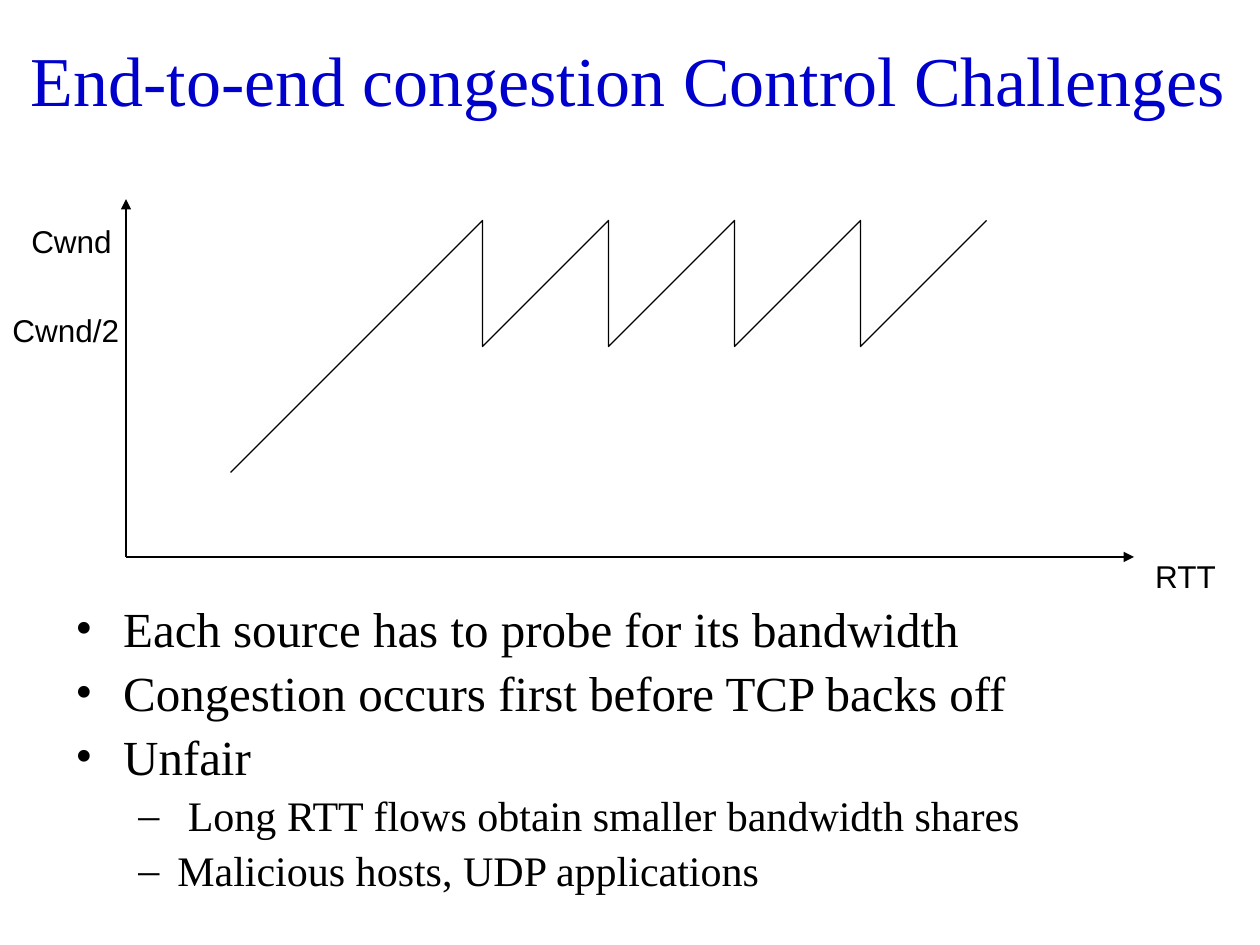
import pptx
import pptx.util
import pptx.dml.color
import pptx.enum.shapes
import pptx.enum.text
import pptx.oxml.ns
from lxml import etree

Inches, Pt = pptx.util.Inches, pptx.util.Pt
qn = pptx.oxml.ns.qn
COLORS = {"title": "0000CC", "ink": "000000"}
SERIF, SANS = "Times New Roman", "Arial"
WIDTH, HEIGHT = 10, 7.5

TITLE = " End-to-end congestion Control Challenges"
POINTS = [
    (0, "Each source has to probe for its bandwidth"),
    (0, "Congestion occurs first before TCP backs off"),
    (0, "Unfair"),
    (1, " Long RTT flows obtain smaller bandwidth shares"),
    (1, "Malicious hosts, UDP applications"),
]
# level: (size, left margin, hanging indent, bullet)
LEVELS = [(28, 0.38, 0.38, "•"), (24, 0.81, 0.31, "–")]
AXIS_LABELS = [
    ("RTT", (9.07, 4.37, 0.69, 0.4)),
    ("Cwnd", (0.15, 1.71, 0.84, 0.4)),
    ("Cwnd/2", (0, 2.42, 1.05, 0.4)),
]
ORIGIN = (1, 4.42)
AXIS_ENDS = [(9, 4.42), (1, 1.58)]
START, FIRST_PEAK = (1.83, 3.75), (3.83, 1.75)
DROP, DROPS = 1, 4

deck = pptx.Presentation()
deck.slide_width, deck.slide_height = Inches(WIDTH), Inches(HEIGHT)
page = deck.slides.add_slide(deck.slide_layouts[6])


def color(name):
    return pptx.dml.color.RGBColor.from_string(COLORS[name])


def write(para, text, size=18, font=SANS, ink="ink"):
    span = para.add_run()
    span.text = text
    span.font.size, span.font.name = Pt(size), font
    span.font.color.rgb = color(ink)


def add_box(area, wrap=True):
    frame = page.shapes.add_textbox(*map(Inches, area)).text_frame
    frame.word_wrap = wrap
    return frame


def add_bullet(para, margin, hang, mark):
    props = para._p.get_or_add_pPr()
    props.set("marL", str(Inches(margin)))
    props.set("indent", str(-Inches(hang)))
    etree.SubElement(props, qn("a:buFont"), typeface=SERIF)
    etree.SubElement(props, qn("a:buChar"), char=mark)


def add_axis(end):
    axis = page.shapes.add_connector(
        pptx.enum.shapes.MSO_CONNECTOR.STRAIGHT, *map(Inches, ORIGIN + end))
    axis.line.color.rgb, axis.line.width = color("ink"), Pt(0.75)
    etree.SubElement(axis.line._get_or_add_ln(), qn("a:tailEnd"), type="triangle")
    etree.SubElement(axis._element.spPr, qn("a:effectLst"))


def add_sawtooth():
    """Climb to the first peak, then repeatedly halve and climb again."""
    x, peak = FIRST_PEAK
    corners = [FIRST_PEAK]
    for tooth in range(DROPS):
        corners += [(x + tooth * DROP, peak + DROP), (x + (tooth + 1) * DROP, peak)]
    builder = page.shapes.build_freeform(*map(Inches, START))
    builder.add_line_segments(
        [(Inches(left), Inches(top)) for left, top in corners], close=False)
    curve = builder.convert_to_shape()
    curve.fill.background()
    curve.line.color.rgb, curve.line.width = color("ink"), Pt(0.75)
    curve.shadow.inherit = False


heading = add_box((0, 0, 9.83, 1.25))
heading.vertical_anchor = pptx.enum.text.MSO_ANCHOR.MIDDLE
heading.margin_left = heading.margin_right = Inches(0.05)
heading.paragraphs[0].alignment = pptx.enum.text.PP_ALIGN.CENTER
write(heading.paragraphs[0], TITLE, size=40, font=SERIF, ink="title")

body = add_box((0.5, 4.75, 9, 2.75))
for index, (level, text) in enumerate(POINTS):
    para = body.add_paragraph() if index else body.paragraphs[0]
    size, margin, hang, mark = LEVELS[level]
    para.level, para.line_spacing = level, 0.9
    para.space_before = Pt(round(size * 0.23, 1))
    add_bullet(para, margin, hang, mark)
    write(para, text, size=size, font=SERIF)

add_sawtooth()
for end in AXIS_ENDS:
    add_axis(end)
for text, area in AXIS_LABELS:
    write(add_box(area, wrap=False).paragraphs[0], text)

deck.save("out.pptx")
